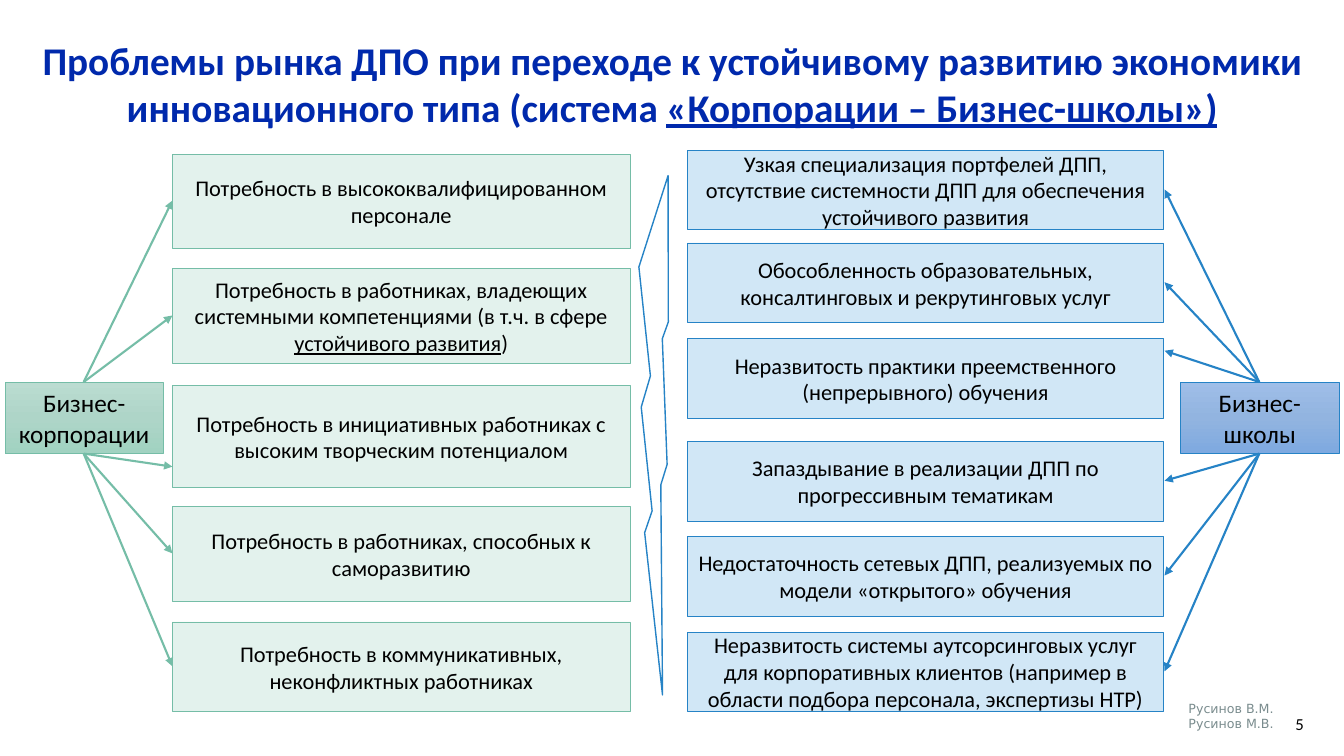
from copy import deepcopy
from dataclasses import dataclass

from lxml import etree
from pptx import Presentation
from pptx.dml.color import RGBColor
from pptx.enum.shapes import MSO_CONNECTOR as Connector, MSO_SHAPE as Shape
from pptx.enum.text import MSO_ANCHOR as Anchor, MSO_AUTO_SIZE as AutoSize, PP_ALIGN as Align
from pptx.oxml.ns import qn
from pptx.util import Pt

EMU_PER_PX = 9144  # 100 px to the inch
GREEN, BLUE = "75BDA7", "2683C6"


@dataclass
class Need:
    """A box in a column; arrow_y overrides the arrow's target, the box middle."""
    top: int
    height: int
    text: str
    arrow_y: int | None = None


@dataclass
class Side:
    hub_left: int
    hub_text: str
    hub_colors: tuple[str, str, str]
    line: str
    box_fill: str
    box_left: int
    box_width: int
    arrow_x: int
    boxes: list[Need]


HUB_TOP, HUB_WIDTH, HUB_HEIGHT = 379, 157, 71

CORPORATIONS = Side(5, "Бизнес-корпорации", ("BBDCD1", "AED5C8", "A1D2C1"), GREEN, "E3F2ED", 171, 454, 171, [
    Need(153, 93, "Потребность в высококвалифицированном персонале"),
    Need(266, 95, "Потребность в работниках, владеющих системными компетенциями "
                  "(в т.ч. в сфере _устойчивого развития_)"),
    Need(382, 102, "Потребность в инициативных работниках с высоким творческим потенциалом", 463),
    Need(502, 95, "Потребность в работниках, способных к саморазвитию"),
    Need(617, 89, "Потребность в коммуникативных, неконфликтных работниках"),
])
SCHOOLS = Side(1171, "Бизнес-школы", ("9FBEE8", "92B4E0", "7EA9E0"), BLUE, "D1E7F6", 682, 472, 1155, [
    Need(149, 79, "Узкая специализация портфелей ДПП, отсутствие системности ДПП "
                  "для обеспечения устойчивого развития"),
    Need(241, 79, "Обособленность образовательных, консалтинговых и рекрутинговых услуг"),
    Need(336, 79, "Неразвитость практики преемственного (непрерывного) обучения", 348),
    Need(438, 79, "Запаздывание в реализации ДПП по прогрессивным тематикам"),
    Need(532, 79, "Недостаточность сетевых ДПП, реализуемых по модели «открытого» обучения"),
    Need(627, 79, "Неразвитость системы аутсорсинговых услуг для корпоративных клиентов "
                  "(например в области подбора персонала, экспертизы НТР)"),
])


def px(*values: int) -> list[int]:
    return [value * EMU_PER_PX for value in values]


def rgb(value: str) -> RGBColor:
    return RGBColor.from_string(value)


def write(frame, lines: list[str], size: int, color: str = "000000", font: str = "Calibri",
          align=Align.CENTER, anchor=Anchor.MIDDLE, bold: bool = False) -> None:
    """Fill a text frame; text between underscores is underlined."""
    frame.word_wrap = True
    frame.vertical_anchor = anchor
    for index, line in enumerate(lines):
        paragraph = frame.add_paragraph() if index else frame.paragraphs[0]
        paragraph.alignment = align
        paragraph.font.size = Pt(size)
        paragraph.font.name = font
        paragraph.font.bold = bold
        paragraph.font.color.rgb = rgb(color)
        for part, text in enumerate(line.split("_")):
            if text:
                run = paragraph.add_run()
                run.text = text
                if part % 2:
                    run.font.underline = True


def add_shape(slide, kind, box: tuple[int, int, int, int], fill: str, line: str, width: float):
    shape = slide.shapes.add_shape(kind, *px(*box))
    shape.shadow.inherit = False
    shape.fill.solid()
    shape.fill.fore_color.rgb = rgb(fill)
    shape.line.color.rgb = rgb(line)
    shape.line.width = Pt(width)
    return shape


def fill_gradient(shape, colors: tuple[str, str, str]) -> None:
    """Three even stops from top to bottom."""
    shape.fill.gradient()
    shape.fill.gradient_angle = 270
    stops = shape._element.spPr.find(f".//{qn('a:gsLst')}")
    stops.insert(1, deepcopy(stops[0]))
    for index, (stop, color) in enumerate(zip(shape.fill.gradient_stops, colors)):
        stop.position = index / 2
        stop.color.rgb = rgb(color)


def add_arrow(slide, start: tuple[int, int], end: tuple[int, int], color: str) -> None:
    arrow = slide.shapes.add_connector(Connector.STRAIGHT, *px(*start, *end))
    arrow.line.color.rgb = rgb(color)
    arrow.line.width = Pt(1.5)
    etree.SubElement(arrow.line._get_or_add_ln(), qn("a:tailEnd"), type="triangle")
    etree.SubElement(arrow._element.spPr, qn("a:effectLst"))


def add_side(slide, side: Side) -> None:
    hub_box = (side.hub_left, HUB_TOP, HUB_WIDTH, HUB_HEIGHT)
    hub = add_shape(slide, Shape.RECTANGLE, hub_box, side.box_fill, side.line, 0.5)
    fill_gradient(hub, side.hub_colors)
    write(hub.text_frame, [side.hub_text], 18)
    hub_middle = side.hub_left + HUB_WIDTH // 2
    for need in side.boxes:
        box = (side.box_left, need.top, side.box_width, need.height)
        shape = add_shape(slide, Shape.RECTANGLE, box, side.box_fill, side.line, 0.5)
        write(shape.text_frame, [need.text], 16)
        target = need.arrow_y or need.top + need.height // 2
        start_y = HUB_TOP if target < HUB_TOP else HUB_TOP + HUB_HEIGHT
        add_arrow(slide, (hub_middle, start_y), (side.arrow_x, target), side.line)


def add_title(slide) -> None:
    title = slide.shapes.title
    title.left, title.top, title.width, title.height = px(0, 30, 1333, 105)
    write(title.text_frame, ["Проблемы рынка ДПО при переходе к устойчивому развитию экономики "
                             "инновационного типа (система _«Корпорации – Бизнес-школы»)_"],
          28, "0029AC", bold=True)
    title.text_frame.auto_size = AutoSize.NONE


def main() -> None:
    presentation = Presentation()
    presentation.slide_width, presentation.slide_height = px(1333, 750)
    slide = presentation.slides.add_slide(presentation.slide_layouts[5])
    add_title(slide)
    for side in (CORPORATIONS, SCHOOLS):
        add_side(slide, side)
    bolt = add_shape(slide, Shape.LIGHTNING_BOLT, (621, 174, 56, 514), "FFFFFF", BLUE, 1)
    bolt.rotation = 4.4
    number = slide.shapes.add_textbox(*px(992, 698, 311, 40))
    write(number.text_frame, ["5"], 12, align=Align.RIGHT)
    authors = slide.shapes.add_textbox(*px(1060, 690, 213, 40))
    write(authors.text_frame, ["Русинов В.М.", "Русинов М.В."], 9, "7A8C8E", "DejaVu Sans",
          Align.RIGHT, Anchor.TOP)
    presentation.save("out.pptx")


if __name__ == "__main__":
    main()
